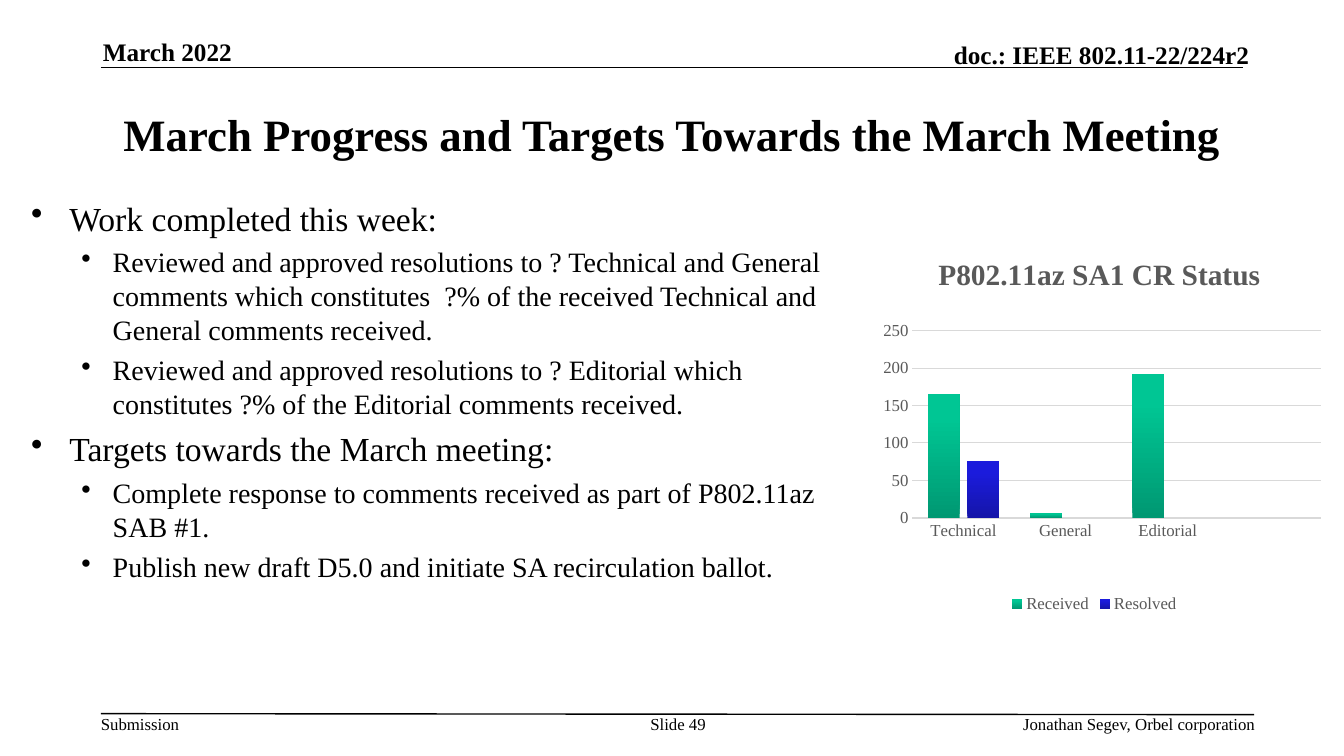
from lxml import etree
from pptx import Presentation
from pptx.chart.data import CategoryChartData
from pptx.dml.color import RGBColor
from pptx.enum.chart import XL_CHART_TYPE, XL_LEGEND_POSITION, XL_TICK_MARK
from pptx.enum.shapes import MSO_CONNECTOR
from pptx.enum.text import MSO_ANCHOR, PP_ALIGN
from pptx.oxml import parse_xml
from pptx.oxml.ns import nsdecls, qn
from pptx.util import Inches, Pt

FONT = "Times New Roman"
COLORS = {"ink": "000000", "label": "595959", "grid": "D9D9D9"}
LEFT, MIDDLE, RIGHT = PP_ALIGN.LEFT, PP_ALIGN.CENTER, PP_ALIGN.RIGHT
TOP, CENTER, BOTTOM = MSO_ANCHOR.TOP, MSO_ANCHOR.MIDDLE, MSO_ANCHOR.BOTTOM

# Content: text, box, size, bold, alignment, anchor
TITLE = "March Progress and Targets Towards the March Meeting"
FOOT = 7.08
LABELS = [
    ("March 2022", (1.02, 0.36, 2.73, 0.3), 18, True, LEFT, BOTTOM),
    ("doc.: IEEE 802.11-22/224r2", (7.29, 0.39, 5.1, 0.3), 18, True, RIGHT, BOTTOM),
    (TITLE, (1, 0.75, 11.33, 1.16), 32, True, MIDDLE, CENTER),
    ("Submission", (1, FOOT, 0.79, 0.2), 12, False, LEFT, TOP),
    ("Slide 49", (6.34, FOOT, 0.77, 0.4), 12, False, MIDDLE, TOP),
    ("Jonathan Segev, Orbel corporation", (7.81, FOOT, 4.64, 0.2), 12, False, RIGHT, TOP),
]
RULES = [(1, 0.67, 12.33, 0.67), (1, FOOT, 12.44, FOOT + 0.01)]
BODY_BOX = (0.21, 1.91, 8.35, 4.75)
BODY = [
    (0, "Work completed this week:"),
    (1, "Reviewed and approved resolutions to ? Technical and General comments "
        "which constitutes  ?% of the received Technical and General comments received."),
    (1, "Reviewed and approved resolutions to ? Editorial which constitutes "
        "?% of the Editorial comments received."),
    (0, "Targets towards the March meeting:"),
    (1, "Complete response to comments received as part of P802.11az SAB #1."),
    (1, "Publish new draft D5.0 and initiate SA recirculation ballot."),
]
# Per level: size, space before, left margin, hanging indent
LEVELS = [(24, 6, 0.38, 0.38), (20, 5, 0.81, 0.31)]

CHART_BOX = (8.48, 2.33, 4.75, 3.79)
CHART_TITLE = "P802.11az SA1 CR Status"
CATEGORIES = ["Technical", "General", "Editorial", ""]
# Series: name, values, gradient from bottom to top
SERIES = [
    ("Received", (166, 6, 192, None), ("009872", "00C694")),
    ("Resolved", (76, 0, 0, None), ("1515A9", "1B1BDC")),
]
TITLE_LAYOUT = {"xMode": "edge", "yMode": "edge", "x": 0.163, "y": 0.04}
PLOT_LAYOUT = {"layoutTarget": "inner", "xMode": "edge", "yMode": "edge",
               "x": 0.12, "y": 0.251, "w": 0.853, "h": 0.49}


def rgb(name):
    return RGBColor.from_string(COLORS.get(name, name))


def style(font, size, color="ink", bold=False):
    font.name, font.size, font.bold = FONT, Pt(size), bold
    font.color.rgb = rgb(color)


def add_box(s, box, anchor=TOP):
    tf = s.shapes.add_textbox(*map(Inches, box)).text_frame
    tf.word_wrap = True
    tf.vertical_anchor = anchor
    return tf


def add_label(s, text, box, size, bold, align, anchor):
    tf = add_box(s, box, anchor)
    tf.margin_left = tf.margin_right = tf.margin_top = tf.margin_bottom = 0
    p = tf.paragraphs[0]
    p.text, p.alignment = text, align
    style(p.runs[0].font, size, bold=bold)


def add_rule(s, ends):
    line = s.shapes.add_connector(MSO_CONNECTOR.STRAIGHT, *map(Inches, ends))
    line.line.color.rgb, line.line.width = rgb("ink"), Pt(1)
    etree.SubElement(line._element.spPr, qn("a:effectLst"))


def add_bullets(s):
    tf = add_box(s, BODY_BOX)
    for i, (level, text) in enumerate(BODY):
        size, before, margin, hang = LEVELS[level]
        p = tf.add_paragraph() if i else tf.paragraphs[0]
        p.text, p.level, p.space_before = text, level, Pt(before)
        style(p.runs[0].font, size)
        pPr = p._p.get_or_add_pPr()
        pPr.set("marL", str(Inches(margin)))
        pPr.set("indent", str(-Inches(hang)))
        etree.SubElement(pPr, qn("a:buChar"), char="•")


def place(parent, before, values):
    """Put a manual layout into a chart part, ahead of or after a given child."""
    for old in parent.findall(qn("c:layout")):
        parent.remove(old)
    items = "".join(f'<c:{k} val="{v}"/>' for k, v in values.items())
    layout = parse_xml(f'<c:layout {nsdecls("c")}><c:manualLayout>{items}'
                       '</c:manualLayout></c:layout>')
    parent.insert(before, layout)


def add_status_chart(s):
    data = CategoryChartData()
    data.categories = CATEGORIES
    for name, values, _ in SERIES:
        data.add_series(name, values)
    chart = s.shapes.add_chart(XL_CHART_TYPE.COLUMN_CLUSTERED,
                               *map(Inches, CHART_BOX), data).chart
    style(chart.font, 10)

    # Title and legend
    tf = chart.chart_title.text_frame
    tf.text = CHART_TITLE
    style(tf.paragraphs[0].runs[0].font, 21, "label", True)
    chart.chart_title.include_in_layout = False
    chart.has_legend = True
    chart.legend.position = XL_LEGEND_POSITION.BOTTOM
    chart.legend.include_in_layout = False
    style(chart.legend.font, 12, "label")

    # Axes
    for axis in (chart.category_axis, chart.value_axis):
        axis.major_tick_mark = axis.minor_tick_mark = XL_TICK_MARK.NONE
        style(axis.tick_labels.font, 12, "label")
    chart.category_axis.format.line.color.rgb = rgb("grid")
    chart.category_axis.format.line.width = Pt(1)
    values = chart.value_axis
    values.minimum_scale, values.maximum_scale, values.major_unit = 0, 250, 50
    values.format.line.fill.background()
    values.major_gridlines.format.line.color.rgb = rgb("grid")
    values.major_gridlines.format.line.width = Pt(0.75)

    # Columns
    plot = chart.plots[0]
    plot.gap_width, plot.overlap, plot.vary_by_categories = 100, -24, False
    for series, (_, _, shades) in zip(plot.series, SERIES):
        fill = series.format.fill
        fill.gradient()
        fill.gradient_angle = 90
        for stop, shade, position in zip(fill.gradient_stops, shades, (0, 0.8)):
            stop.color.rgb, stop.position = rgb(shade), position

    place(chart.chart_title._element, 1, TITLE_LAYOUT)
    place(chart._chartSpace.chart.plotArea, 0, PLOT_LAYOUT)


def main():
    prs = Presentation()
    prs.slide_width, prs.slide_height = Inches(13.33), Inches(7.5)
    s = prs.slides.add_slide(prs.slide_layouts[6])
    for ends in RULES:
        add_rule(s, ends)
    for label in LABELS:
        add_label(s, *label)
    add_bullets(s)
    add_status_chart(s)
    prs.save("out.pptx")


if __name__ == "__main__":
    main()
